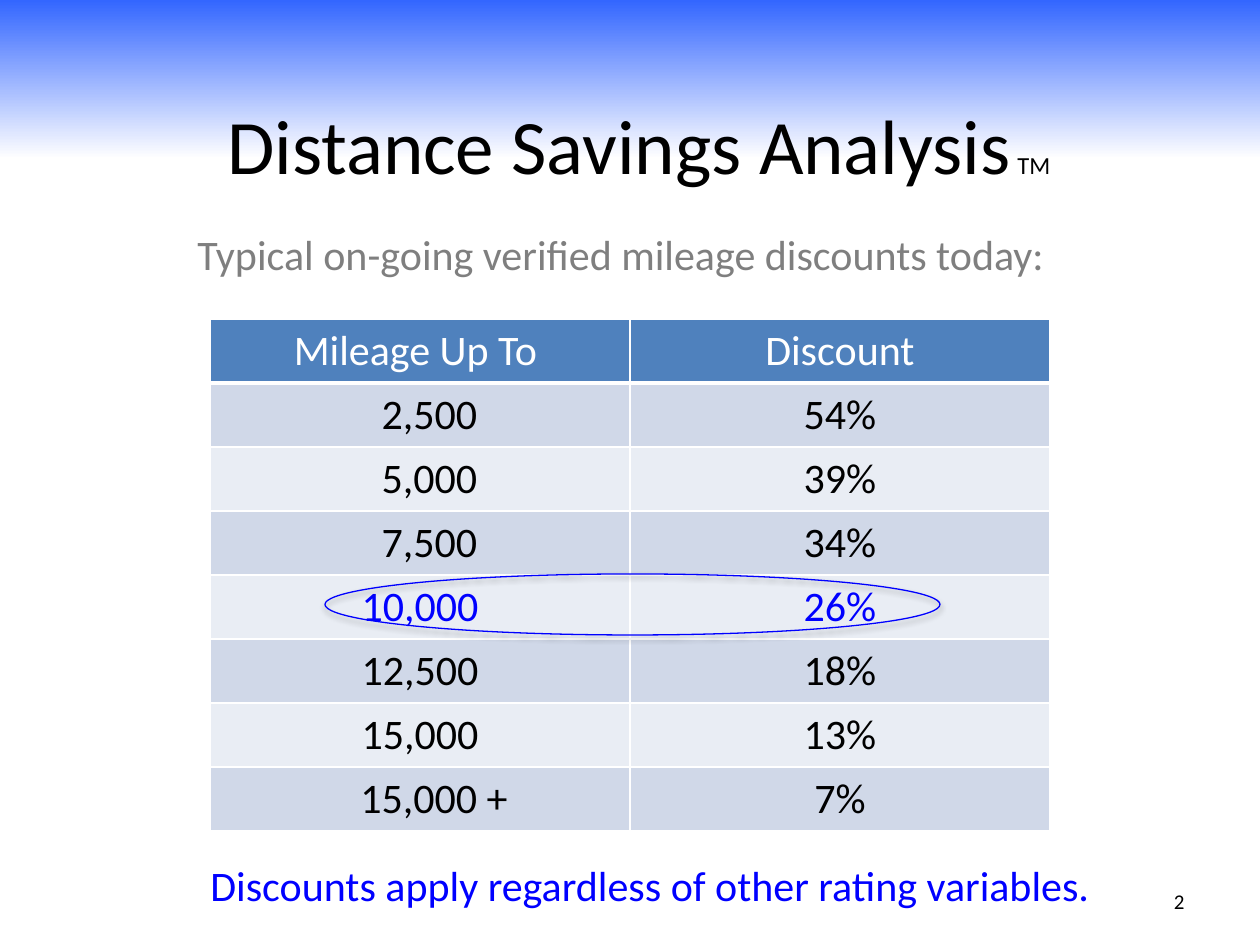
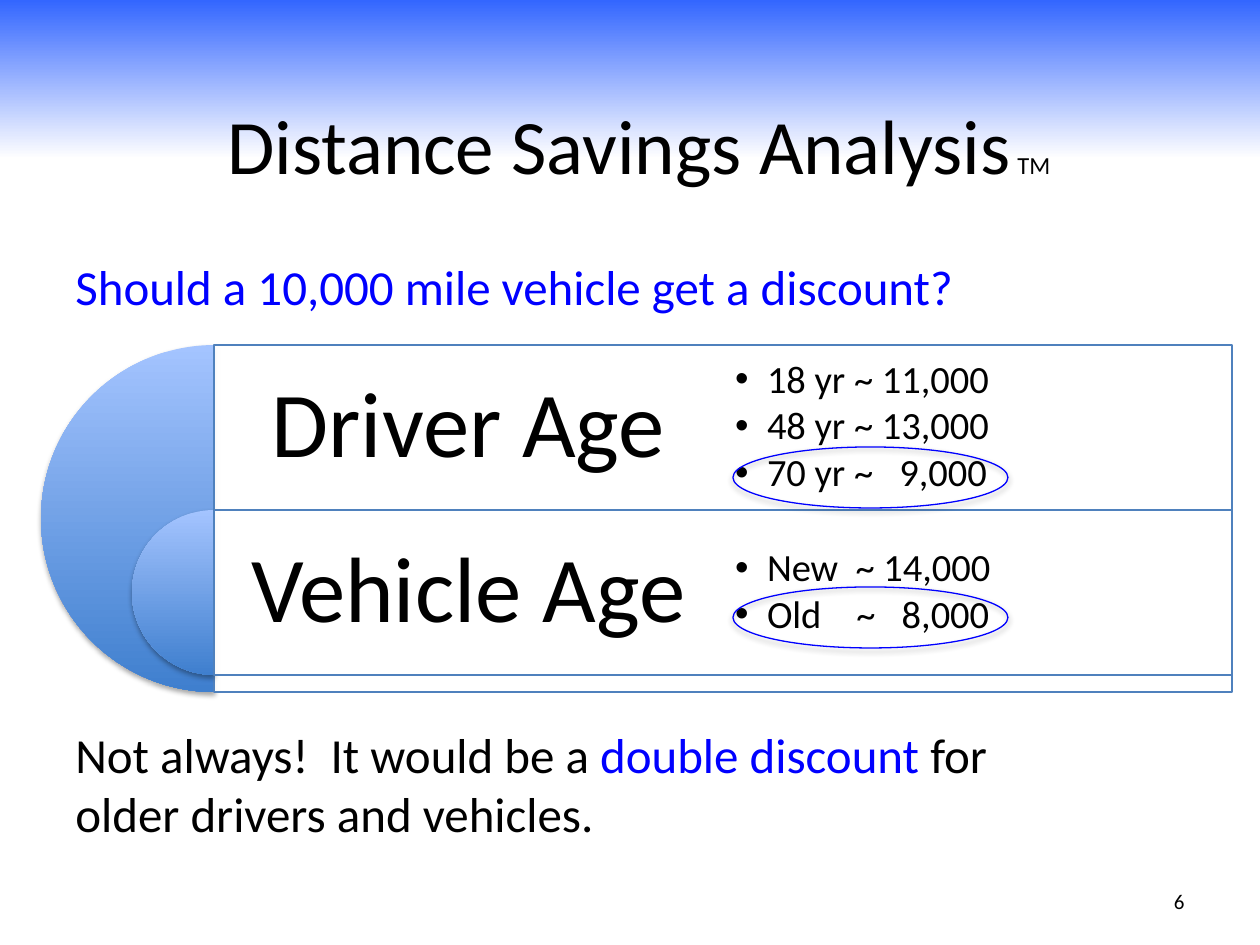
from dataclasses import dataclass

from lxml.etree import SubElement
from pptx import Presentation
from pptx.dml.color import RGBColor
from pptx.enum.shapes import MSO_SHAPE as Kind
from pptx.enum.text import MSO_ANCHOR as Anchor, PP_ALIGN as Align
from pptx.oxml.ns import qn
from pptx.util import Emu, Pt


@dataclass(frozen=True)
class Theme:
    font: str = "Calibri"
    dot: str = "Arial"
    black: str = "000000"
    white: str = "FFFFFF"
    blue: str = "0000FF"
    grey: str = "7F7F7F"
    band: str = "3366FF"
    head: str = "4F81BD"
    dark: str = "D0D8E8"
    light: str = "E9EDF4"
    disc_top: str = "A4C4FF"
    disc_end: str = "3F7FCE"
    title: int = 44
    mark: int = 14
    label: int = 53
    lead: int = 28
    body: int = 24
    item: int = 22
    page: int = 12


T = Theme()
TITLE_ONLY = 5
INSET = 13


def px(n):
    return Emu(round(n * 914400 / 126))


def rgb(code):
    return RGBColor.from_string(code)


def style(font, size, color=T.black):
    font.name, font.size = T.font, Pt(size)
    font.color.rgb = rgb(color)


def place(shape, box):
    shape.left, shape.top, shape.width, shape.height = map(px, box)


# Shapes
def draw(slide, kind, box, line=None):
    shape = slide.shapes.add_shape(kind, *map(px, box))
    shape.shadow.inherit = False
    shape.fill.background()
    if line:
        shape.line.color.rgb = rgb(line)
        shape.line.width = Pt(0.75)
    else:
        shape.line.fill.background()
    return shape


def fade(shape, top, end):
    shape.fill.gradient()
    shape.fill.gradient_angle = 270
    for stop, code in zip(shape.fill.gradient_stops, (top, end)):
        stop.color.rgb = rgb(code)


def shade(shape):
    effects = shape.element.spPr.find(qn("a:effectLst"))
    outer = SubElement(effects, qn("a:outerShdw"), blurRad="40000",
                       dist="23000", dir="5400000", rotWithShape="0")
    color = SubElement(outer, qn("a:srgbClr"), val=T.black)
    SubElement(color, qn("a:alpha"), val="35000")


def ring(slide, box):
    shade(draw(slide, Kind.OVAL, box, T.blue))


# Text
def frame(slide, box, anchor=Anchor.TOP, inset=None):
    text = slide.shapes.add_textbox(*map(px, box)).text_frame
    text.word_wrap = True
    text.vertical_anchor = anchor
    if inset is not None:
        text.margin_left = text.margin_right = px(inset)
        text.margin_top = text.margin_bottom = px(inset)
    return text


def write(para, words, size, color=T.black, align=Align.LEFT):
    para.text = words
    para.alignment = align
    style(para.font, size, color)


def mixed(para, parts):
    for words, size, color in parts:
        run = para.add_run()
        run.text = words
        style(run.font, size, color)


def bullet(para, parts):
    """Strings are words; numbers widen the space between them, in points."""
    props = para._p.get_or_add_pPr()
    props.set("marL", str(px(32)))
    props.set("indent", str(-px(32)))
    SubElement(props, qn("a:buFont"), typeface=T.dot)
    SubElement(props, qn("a:buChar"), char="•")
    for part in parts:
        run = para.add_run()
        if isinstance(part, str):
            run.text = part
        else:
            run.text = " "
            run.font._element.set("spc", str(part * 100))
    para.line_spacing = 0.9
    para.space_after = Pt(3)
    style(para.font, T.item)


# Parts every slide shares: band, title, page number
def start(deck, page):
    slide = deck.slides.add_slide(deck.slide_layouts[TITLE_ONLY])
    title = slide.shapes.title
    place(title, (63, 65, 1134, 158))
    text = title.text_frame
    text.vertical_anchor = Anchor.MIDDLE
    text.margin_left = px(INSET + 17)
    para = text.paragraphs[0]
    para.alignment = Align.CENTER
    mixed(para, (("Distance Savings Analysis", T.title, T.black),
                 (" TM", T.mark, T.black)))

    band = draw(slide, Kind.RECTANGLE, (0, 0, 1260, 159))
    fade(band, T.band, T.white)
    title.element.addprevious(band.element)

    foot = frame(slide, (903, 876, 294, 50), Anchor.MIDDLE)
    write(foot.paragraphs[0], page, T.page, align=Align.RIGHT)
    return slide


# Discount table
def edge(cell, side, width):
    line = SubElement(cell._tc.get_or_add_tcPr(), qn("a:" + side),
                      w=str(Pt(width)))
    fill = SubElement(line, qn("a:solidFill"))
    SubElement(fill, qn("a:srgbClr"), val=T.white)


def grid(slide, box, rows, marked):
    """Each row is mileage, discount, and the sideways shift of the mileage."""
    table = slide.shapes.add_table(len(rows), 2, *map(px, box)).table
    table.first_row = table.horz_banding = False
    for r, (miles, rate, shift) in enumerate(rows):
        table.rows[r].height = px(box[3] // len(rows))
        back = T.head if r == 0 else (T.light, T.dark)[r % 2]
        ink = T.white if r == 0 else T.blue if r == marked else T.black
        for c, words in enumerate((miles, rate)):
            cell = table.cell(r, c)
            for side in ("lnL", "lnR", "lnT", "lnB"):
                thick = (r, side) in ((0, "lnB"), (1, "lnT"))
                edge(cell, side, 3 if thick else 1)
            cell.fill.solid()
            cell.fill.fore_color.rgb = rgb(back)
            if c == 0:
                cell.margin_left = px(INSET + max(shift, 0))
                cell.margin_right = px(INSET + max(-shift, 0))
            write(cell.text_frame.paragraphs[0], words, T.body, ink,
                  Align.CENTER)


def rates(deck):
    slide = start(deck, "2")
    rows = (("Mileage Up To", "Discount", -9),
            ("2,500", "54%", 19), ("5,000", "39%", 19), ("7,500", "34%", 19),
            ("10,000", "26%", 0), ("12,500", "18%", 0), ("15,000", "13%", 0),
            ("15,000 +", "7%", 28))
    grid(slide, (210, 319, 840, 512), rows, marked=4)
    ring(slide, (325, 574, 615, 61))

    intro = frame(slide, (185, 222, 898, 63))
    write(intro.paragraphs[0],
          "Typical on-going verified mileage discounts today:",
          T.body, T.grey)
    note = frame(slide, (198, 853, 935, 63))
    write(note.paragraphs[0],
          "Discounts apply regardless of other rating variables.",
          T.body, T.blue)


# Nested half discs with a labelled panel for each
def nest(slide, box, groups):
    left, top, width, height = box
    spine = left + height // 2
    wide = left + width - spine
    half, row = wide // 2, 165
    for i, (label, items) in enumerate(groups):
        y = top + i * row
        size = row if i else height
        disc = draw(slide, Kind.PIE, (spine - size // 2, y, size, size))
        disc.adjustments[0], disc.adjustments[1] = 54, 162
        fade(disc, T.disc_top, T.disc_end)
        shade(disc)

        panel = draw(slide, Kind.RECTANGLE, (spine, y, wide, size), T.head)
        panel.fill.solid()
        panel.fill.fore_color.rgb = rgb(T.white)
        tint = panel.element.spPr.find(qn("a:solidFill"))[0]
        SubElement(tint, qn("a:alpha"), val="90000")

        name = frame(slide, (spine, y, half, row), Anchor.MIDDLE, 28)
        write(name.paragraphs[0], label, T.label, align=Align.CENTER)
        name.paragraphs[0].line_spacing = 0.9

        text = frame(slide, (spine + half + 1, y, half, row),
                     Anchor.MIDDLE, 11)
        for n, parts in enumerate(items):
            bullet(text.add_paragraph() if n else text.paragraphs[0], parts)


def ages(deck):
    slide = start(deck, "6")
    drivers = (("18 yr ~ 11,000",), ("48 yr ~ 13,000",),
               ("70 yr ~", 10, "9,000"))
    cars = (("New", 5, "~ 14,000"), ("Old", 15, "~", 10, "8,000"))
    nest(slide, (41, 345, 1191, 347),
         (("Driver Age", drivers), ("Vehicle Age", cars)))
    for y in (447, 587):
        ring(slide, (733, y, 275, 61))

    ask = frame(slide, (63, 250, 1134, 80))
    write(ask.paragraphs[0], "Should a 10,000 mile vehicle get a discount?",
          T.lead, T.blue)
    reply = frame(slide, (63, 718, 993, 131))
    mixed(reply.paragraphs[0],
          (("Not always!  It would be a ", T.lead, T.black),
           ("double discount ", T.lead, T.blue),
           ("for older drivers and vehicles.", T.lead, T.black)))


def main():
    deck = Presentation()
    deck.slide_width, deck.slide_height = px(1260), px(945)
    rates(deck)
    ages(deck)
    deck.save("out.pptx")


if __name__ == "__main__":
    main()
